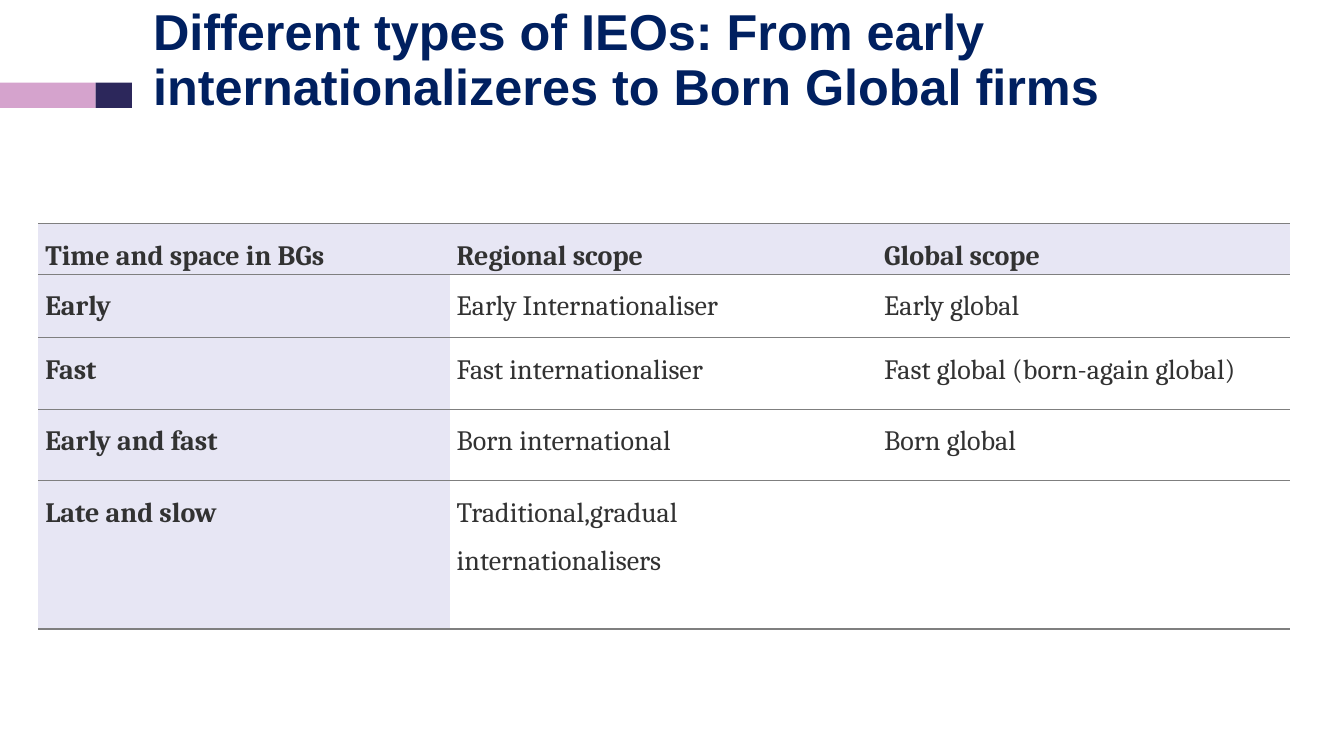
import pptx
import pptx.dml.color
import pptx.enum.shapes
import pptx.enum.text
import pptx.oxml
import pptx.oxml.ns
import pptx.util
from pptx.util import Inches

COLORS = {
    "pink": "D5A3CD",
    "indigo": "2C275B",
    "title": "002060",
    "text": "323232",
    "lavender": "E7E6F4",
    "rule": "7F7F7F",
}
COLUMN_WIDTHS = [4.08, 4.24, 4.1]
ROW_HEIGHTS = [0.49, 0.63, 0.71, 0.71, 1.47]
ROWS = [
    ["Time and space in BGs", "Regional scope", "Global scope"],
    ["Early", "Early Internationaliser", "Early global"],
    ["Fast", "Fast internationaliser", "Fast global (born-again global)"],
    ["Early and fast", "Born international", "Born global"],
    ["Late and slow", "Traditional,gradual internationalisers", ""],
]


def rgb(name):
    return pptx.dml.color.RGBColor.from_string(COLORS[name])


def style_font(font, name, size, color, bold):
    font.name = name
    font.size = pptx.util.Pt(size)
    font.bold = bold
    font.color.rgb = rgb(color)


def add_bar(slide, left, width, color):
    shape = slide.shapes.add_shape(
        pptx.enum.shapes.MSO_SHAPE.RECTANGLE,
        Inches(left), Inches(0.82), Inches(width), Inches(0.25))
    shape.shadow.inherit = False
    shape.fill.solid()
    shape.fill.fore_color.rgb = rgb(color)
    shape.line.fill.background()


def add_title(slide, text):
    box = slide.shapes.add_textbox(
        Inches(1.42), Inches(0.12), Inches(11.5), Inches(0.98))
    frame = box.text_frame
    frame.word_wrap = True
    frame.vertical_anchor = pptx.enum.text.MSO_ANCHOR.MIDDLE
    frame.text = text
    paragraph = frame.paragraphs[0]
    paragraph.line_spacing = 0.9
    style_font(paragraph.runs[0].font, "Arial", 36, "title", True)


def add_borders(cell):
    properties = cell._tc.get_or_add_tcPr()
    rule = f'<a:solidFill><a:srgbClr val="{COLORS["rule"]}"/></a:solidFill>'
    paints = {"lnL": "<a:noFill/>", "lnR": "<a:noFill/>", "lnT": rule, "lnB": rule}
    for side, paint in paints.items():
        properties.append(pptx.oxml.parse_xml(
            f'<a:{side} {pptx.oxml.ns.nsdecls("a")} w="12700">{paint}</a:{side}>'))


def fill_cell(cell, text, is_heading):
    add_borders(cell)
    if is_heading:
        cell.fill.solid()
        cell.fill.fore_color.rgb = rgb("lavender")
    else:
        cell.fill.background()
    cell.margin_left = cell.margin_right = Inches(0.07)
    cell.margin_top = cell.margin_bottom = 0
    cell.text_frame.text = text
    paragraph = cell.text_frame.paragraphs[0]
    paragraph.alignment = pptx.enum.text.PP_ALIGN.JUSTIFY
    paragraph.line_spacing = 1.5
    for run in paragraph.runs:
        style_font(run.font, "Cambria", 20, "text", is_heading)


def add_scope_table(slide):
    table = slide.shapes.add_table(
        len(ROWS), len(COLUMN_WIDTHS), Inches(0.38), Inches(2.22),
        Inches(sum(COLUMN_WIDTHS)), Inches(sum(ROW_HEIGHTS))).table
    table.first_row = False
    table.horz_banding = False
    for column, width in zip(table.columns, COLUMN_WIDTHS):
        column.width = Inches(width)
    for row, height in zip(table.rows, ROW_HEIGHTS):
        row.height = Inches(height)
    for row_index, texts in enumerate(ROWS):
        for column_index, text in enumerate(texts):
            is_heading = row_index == 0 or column_index == 0
            fill_cell(table.cell(row_index, column_index), text, is_heading)


def main():
    presentation = pptx.Presentation()
    presentation.slide_width = Inches(13.33)
    presentation.slide_height = Inches(7.5)
    slide = presentation.slides.add_slide(presentation.slide_layouts[6])
    add_bar(slide, 0, 0.95, "pink")
    add_bar(slide, 0.95, 0.36, "indigo")
    add_title(slide, "Different types of IEOs: From early internationalizeres to Born Global firms")
    add_scope_table(slide)
    presentation.save("out.pptx")


if __name__ == "__main__":
    main()
